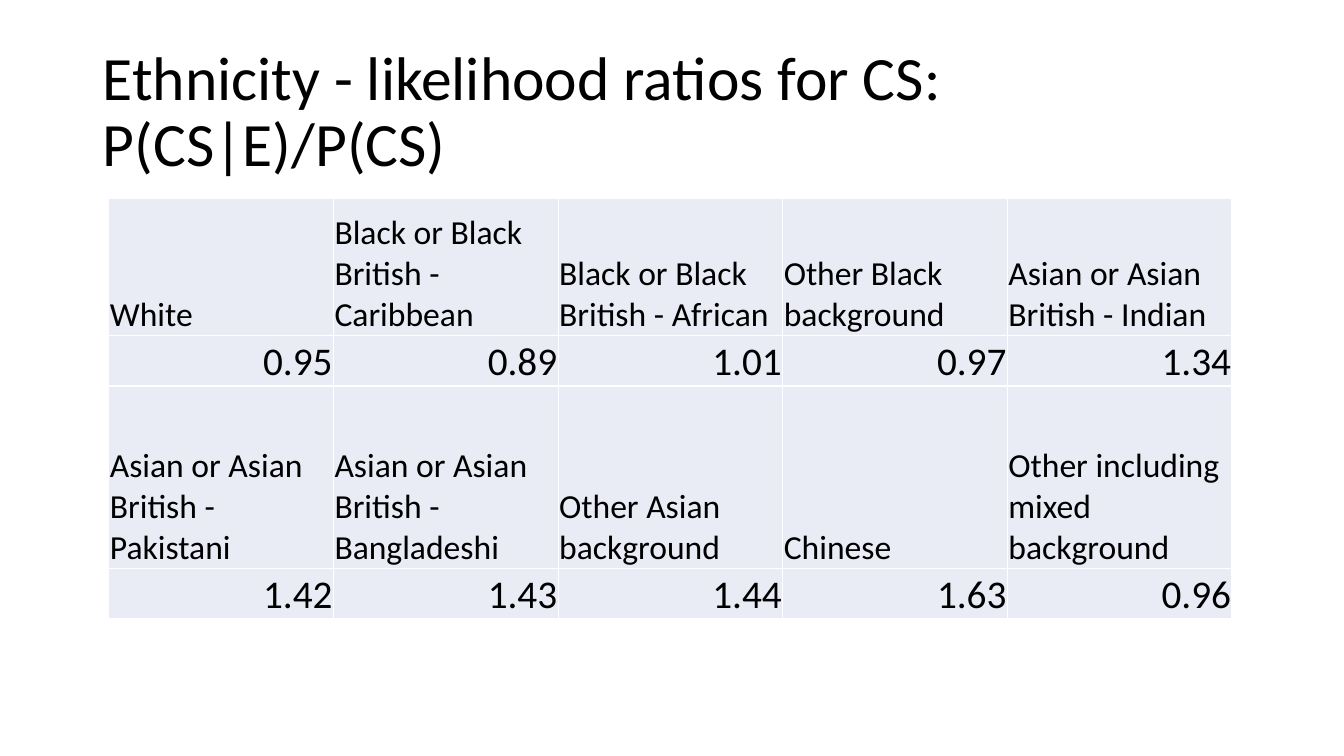
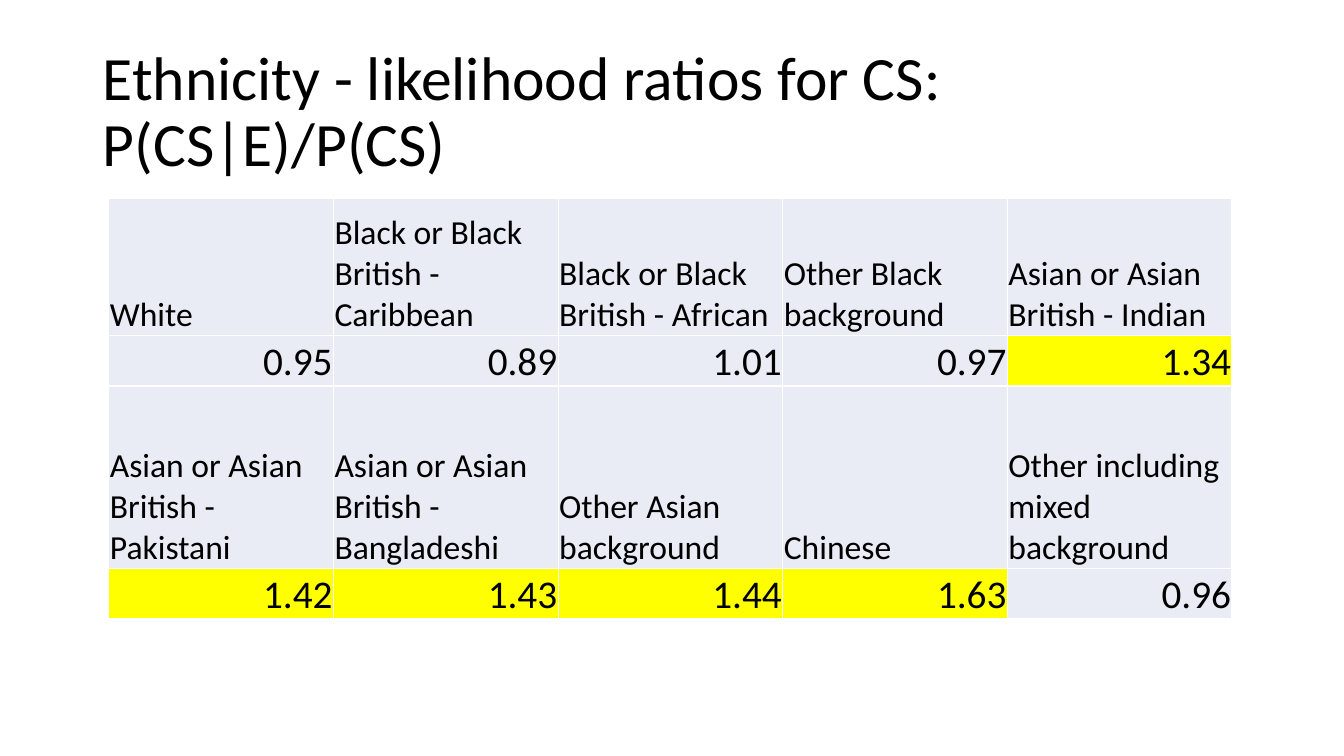
from dataclasses import dataclass

from lxml.etree import SubElement
from pptx import Presentation
from pptx.dml.color import RGBColor
from pptx.enum.text import MSO_ANCHOR, MSO_AUTO_SIZE, PP_ALIGN
from pptx.oxml.ns import qn
from pptx.util import Inches, Pt

# Content
TITLE = "Ethnicity - likelihood ratios for CS: P(CS|E)/P(CS)"
RATIOS = [
    ("White", 0.95),
    ("Black or Black British - Caribbean", 0.89),
    ("Black or Black British - African", 1.01),
    ("Other Black background", 0.97),
    ("Asian or Asian British - Indian", 1.34),
    ("Asian or Asian British - Pakistani", 1.42),
    ("Asian or Asian British - Bangladeshi", 1.43),
    ("Other Asian background", 1.44),
    ("Chinese", 1.63),
    ("Other including mixed background", 0.96),
]
HIGHLIGHT_ABOVE = 1.3
SLIDES_HIGHLIGHTED = [False, True]


@dataclass(frozen=True)
class Theme:
    font: str = "Calibri"
    text: str = "000000"
    cell: str = "E9EBF5"
    highlight: str = "FFFF00"
    border: str = "FFFFFF"
    border_width: int = Pt(1)
    title_size: int = Pt(44)
    label_size: int = Pt(24)
    ratio_size: int = Pt(28)


THEME = Theme()

# Layout in inches
SLIDE_SIZE = (13.33, 7.5)
TITLE_BOX = (0.92, 0.4, 11.5, 1.45)
TABLE_LEFT, TABLE_TOP, TABLE_WIDTH = 1.08, 1.97, 11.14
COLUMNS = 5
ROW_HEIGHTS = (1.36, 0.5, 1.81, 0.5)
CELL_MARGIN = 0.01


def style_paragraph(paragraph, size, alignment):
    paragraph.alignment = alignment
    for run in paragraph.runs:
        run.font.name = THEME.font
        run.font.size = size
        run.font.color.rgb = RGBColor.from_string(THEME.text)


def add_title(slide):
    title = slide.shapes.title
    title.left, title.top, title.width, title.height = map(Inches, TITLE_BOX)
    frame = title.text_frame
    frame.text = TITLE
    frame.word_wrap = True
    frame.auto_size = MSO_AUTO_SIZE.NONE
    frame.vertical_anchor = MSO_ANCHOR.MIDDLE
    paragraph = frame.paragraphs[0]
    paragraph.line_spacing = 0.9
    style_paragraph(paragraph, THEME.title_size, PP_ALIGN.LEFT)


def add_borders(cell):
    properties = cell._tc.get_or_add_tcPr()
    for side in ("a:lnL", "a:lnR", "a:lnT", "a:lnB"):
        line = SubElement(properties, qn(side), w=str(THEME.border_width))
        fill = SubElement(line, qn("a:solidFill"))
        SubElement(fill, qn("a:srgbClr"), val=THEME.border)


def fill_cell(cell, text, size, alignment, color):
    cell.text = text
    cell.vertical_anchor = MSO_ANCHOR.BOTTOM
    cell.margin_left = cell.margin_right = cell.margin_top = Inches(CELL_MARGIN)
    cell.margin_bottom = 0
    add_borders(cell)
    cell.fill.solid()
    cell.fill.fore_color.rgb = RGBColor.from_string(color)
    style_paragraph(cell.text_frame.paragraphs[0], size, alignment)


def add_ratio_table(slide, highlighted):
    table = slide.shapes.add_table(
        len(ROW_HEIGHTS), COLUMNS, Inches(TABLE_LEFT), Inches(TABLE_TOP),
        Inches(TABLE_WIDTH), Inches(sum(ROW_HEIGHTS))).table
    table.first_row = table.horz_banding = False
    for row, height in zip(table.rows, ROW_HEIGHTS):
        row.height = Inches(height)

    # Each group takes a label cell with its ratio in the row below
    for index, (label, ratio) in enumerate(RATIOS):
        band, column = divmod(index, COLUMNS)
        marked = highlighted and ratio > HIGHLIGHT_ABOVE
        fill_cell(table.cell(2 * band, column), label,
                  THEME.label_size, PP_ALIGN.LEFT, THEME.cell)
        fill_cell(table.cell(2 * band + 1, column), f"{ratio:.2f}",
                  THEME.ratio_size, PP_ALIGN.RIGHT,
                  THEME.highlight if marked else THEME.cell)


def main():
    presentation = Presentation()
    presentation.slide_width, presentation.slide_height = map(Inches, SLIDE_SIZE)
    title_only = presentation.slide_layouts.get_by_name("Title Only")
    for highlighted in SLIDES_HIGHLIGHTED:
        slide = presentation.slides.add_slide(title_only)
        add_title(slide)
        add_ratio_table(slide, highlighted)
    presentation.save("out.pptx")


if __name__ == "__main__":
    main()
